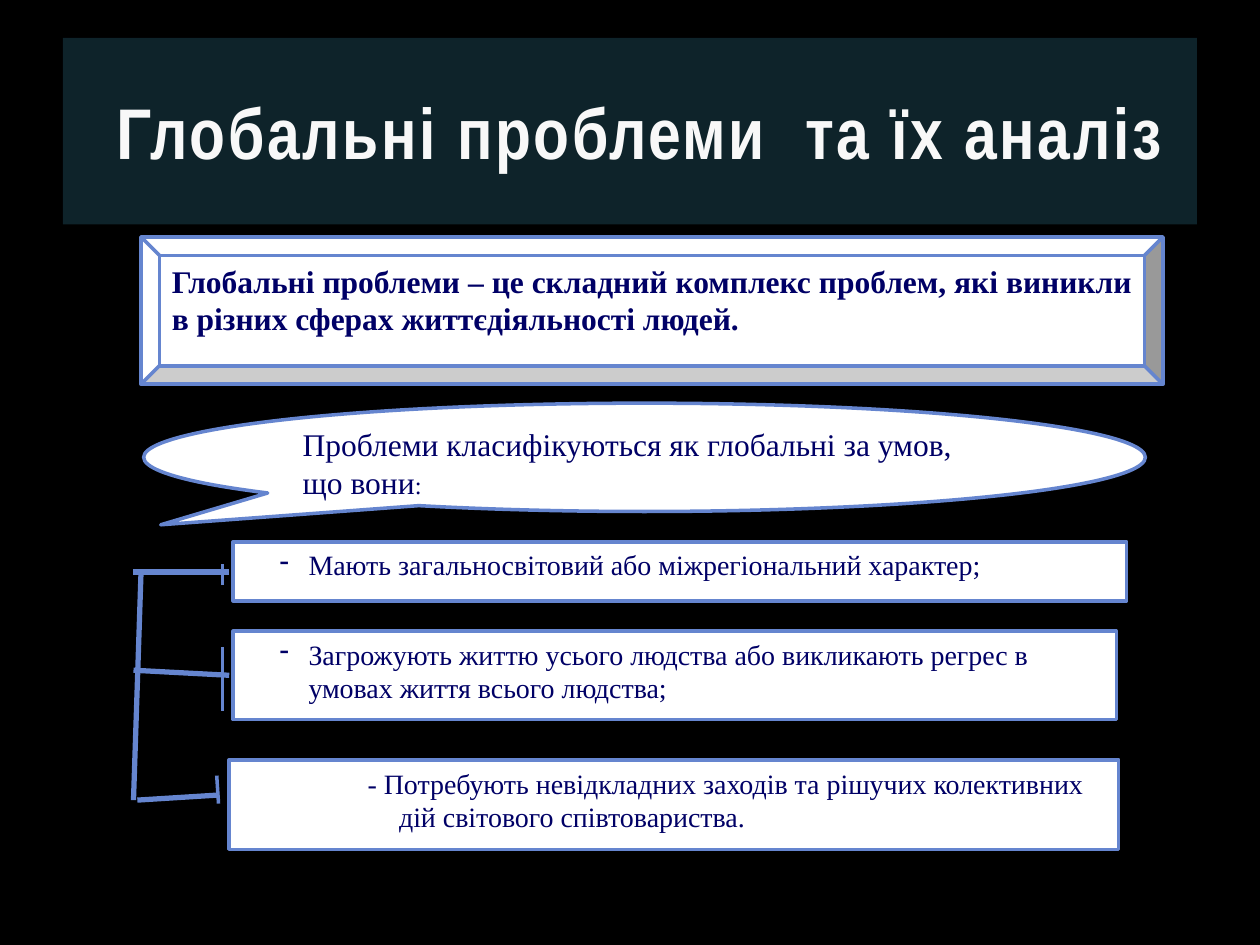
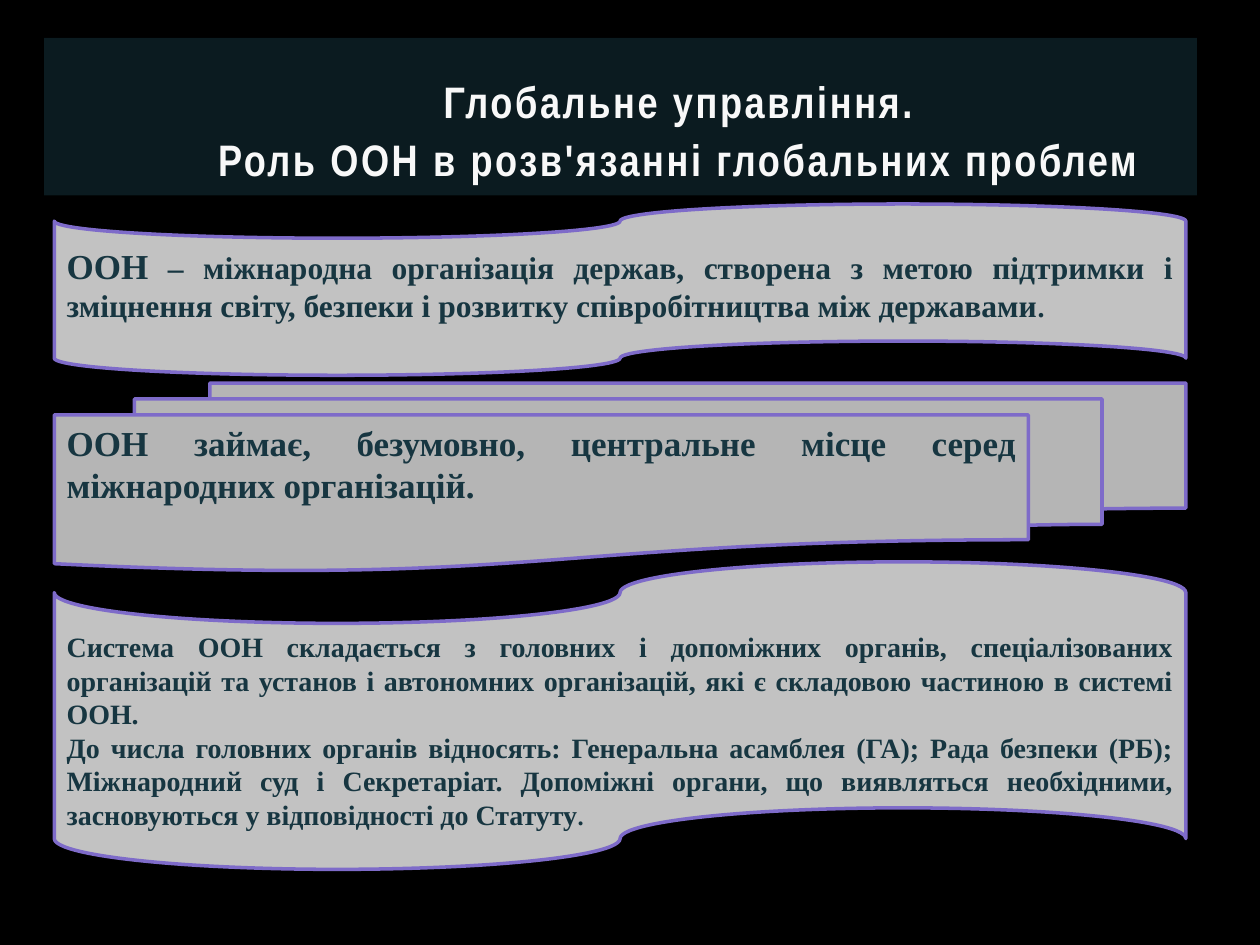
"""Build two slides on global problems and the role of the UN."""
from dataclasses import dataclass

from lxml import etree
from pptx import Presentation, dml, oxml, shapes as sp, slide as sl, util as u
from pptx.dml import color as dc
from pptx.enum import shapes as es, text as et
from pptx.oxml import ns
from pptx.shapes import autoshape as au
from pptx.text import text as tt

Pt = u.Pt
KIND = es.MSO_SHAPE
ALIGN = et.PP_ALIGN
HEX = {
    "black": "000000", "white": "FFFFFF", "pale": "F8F8F8", "navy": "000066",
    "teal": "173641", "blue": "6585CF", "violet": "7E6BC9",
}
SERIF, NARROW = "Times New Roman", "Arial Narrow"


@dataclass
class Look:
    ink: str
    line: str
    bold: bool = False
    align: et.PP_ALIGN = ALIGN.LEFT


@dataclass
class Box:
    kind: es.MSO_SHAPE
    at: tuple[float, float, float, float]
    look: Look
    runs: list[tuple[str, float]]
    adj: tuple[float, ...] = ()
    alpha: int = 100
    margin: float = 0
    indent: float = 0
    dash: bool = False


@dataclass
class Title:
    at: tuple[float, float, float, float]
    lines: list[str]
    size: float
    alpha: int
    left: float = 7.2
    top: float = 3.6
    margin: float = 0


@dataclass
class Line:
    start: tuple[float, float]
    end: tuple[float, float]


PLAIN = Look("navy", "blue")
LEAD = Look("navy", "blue", True, ALIGN.JUSTIFY)
NOTE = Look("teal", "violet", True, ALIGN.JUSTIFY)

HEAD_1 = Title((36, 21.6, 648, 106.6), ["Глобальні проблеми  та їх аналіз"],
               41, 65, left=18.5)
HEAD_2 = Title((25.2, 21.6, 658.8, 90),
               ["Глобальне управління.", "Роль ООН в розв'язанні глобальних проблем"],
               25.2, 50, top=19, margin=66)

ISSUES = [
    Box(KIND.BEVEL, (80.6, 135.4, 584, 84.2), LEAD,
        [("Глобальні проблеми – це складний комплекс проблем, які виникли "
          "в різних сферах життєдіяльності людей.", 18)], (0.125,)),
    Box(KIND.OVAL_CALLOUT, (82.1, 230.4, 572.4, 61.9), PLAIN,
        [("Проблеми класифікуються як глобальні за умов, що вони", 18), (":", 14)],
        (-0.483, 0.623)),
    Box(KIND.LINE_CALLOUT_1, (133.2, 309.6, 510.5, 33.8), PLAIN,
        [("Мають загальносвітовий або міжрегіональний характер;", 16)],
        (0.735, -0.012, 0.379, -0.012), margin=36, indent=-16.5, dash=True),
    Box(KIND.LINE_CALLOUT_1, (133.2, 360.7, 504.7, 50.4), PLAIN,
        [("Загрожують життю усього людства або викликають регрес в "
          "умовах життя всього людства;", 16)],
        (0.179, -0.012, 0.91, -0.012), margin=36, indent=-16.5, dash=True),
    Box(KIND.LINE_CALLOUT_1, (131, 434.2, 508.3, 51.1), PLAIN,
        [("- Потребують невідкладних заходів та рішучих колективних "
          "дій світового співтовариства.", 16)],
        (0.176, -0.014, 0.489, -0.012), margin=90, indent=-18),
]
TREE = [
    Line((80.6, 326.9), (76.3, 457.2)),
    Line((131, 326.9), (76.3, 326.9)),
    Line((131, 385.9), (76.3, 383)),
    Line((125.3, 454.3), (78.5, 457.2)),
]
UNION = [
    Box(KIND.FLOWCHART_PUNCHED_TAPE, (31, 116.6, 646.6, 97.9), NOTE,
        [("ООН", 20),
         (" – міжнародна організація держав, створена з метою підтримки і "
          "зміцнення світу, безпеки і розвитку співробітництва між державами", 18),
         (".", 16)], alpha=76),
    Box(KIND.FLOWCHART_MULTIDOCUMENT, (31, 218.9, 646.6, 107.3), NOTE,
        [("ООН займає, безумовно, центральне місце серед "
          "міжнародних організацій.", 20)], alpha=71),
    Box(KIND.FLOWCHART_PUNCHED_TAPE, (31, 321.1, 646.6, 175.7), NOTE,
        [("Система ООН складається з головних і допоміжних органів, спеціалізованих "
          "організацій та установ і автономних організацій, які є складовою частиною "
          "в системі ООН.\vДо числа головних органів відносять: Генеральна асамблея "
          "(ГА); Рада безпеки (РБ); Міжнародний суд і Секретаріат. Допоміжні органи, "
          "що виявляться необхідними, засновуються у відповідності до Статуту", 16),
         (".", 14)], alpha=76),
]


def tint(name: str) -> dc.RGBColor:
    """Return a named colour."""
    return dc.RGBColor.from_string(HEX[name])


def style(run: tt._Run, face: str, size: float, ink: str, bold: bool) -> None:
    """Format one run."""
    font = run.font
    font.name, font.size, font.bold = face, Pt(size), bold
    font.color.rgb = tint(ink)


def inset(para: tt._Paragraph, margin: float, indent: float) -> etree._Element:
    """Set the paragraph indents and return its properties."""
    prop = para._p.get_or_add_pPr()
    prop.set("marL", str(Pt(margin)))
    prop.set("indent", str(Pt(indent)))
    return prop


def panel(page: sl.Slide, kind: es.MSO_SHAPE, at: tuple[float, ...],
          fill: str, alpha: int) -> au.Shape:
    """Add a filled shape that wraps its text."""
    shape = page.shapes.add_shape(kind, *map(Pt, at))
    shape.shadow.inherit = False
    shape.fill.solid()
    shape.fill.fore_color.rgb = tint(fill)
    if alpha < 100:
        rgb = shape.fill._xPr.find(ns.qn("a:solidFill"))[0]
        etree.SubElement(rgb, ns.qn("a:alpha"), val=str(alpha * 1000))
    shape.text_frame.word_wrap = True
    return shape


def draw_title(page: sl.Slide, head: Title) -> None:
    """Draw the title band."""
    shape = panel(page, KIND.RECTANGLE, head.at, "teal", head.alpha)
    shape.line.fill.background()
    frame = shape.text_frame
    frame.vertical_anchor = et.MSO_ANCHOR.MIDDLE
    frame.margin_left, frame.margin_top = Pt(head.left), Pt(head.top)
    frame.text = "\n".join(head.lines)
    for i, para in enumerate(frame.paragraphs):
        para.alignment = ALIGN.CENTER
        inset(para, head.margin, 0)
        if i:
            para.space_before = Pt(3)
        for run in para.runs:
            style(run, NARROW, head.size, "pale", True)
            run._r.get_or_add_rPr().set("spc", "150")


def draw_box(page: sl.Slide, box: Box) -> None:
    """Draw an outlined shape with its text."""
    look = box.look
    shape = panel(page, box.kind, box.at, "white", box.alpha)
    shape.line.color.rgb = tint(look.line)
    shape.line.width = Pt(2)
    for i, value in enumerate(box.adj):
        shape.adjustments[i] = value
    frame = shape.text_frame
    frame.vertical_anchor = et.MSO_ANCHOR.TOP
    para = frame.paragraphs[0]
    para.alignment, para.space_after = look.align, Pt(10)
    prop = inset(para, box.margin, box.indent)
    if box.dash:
        etree.SubElement(prop, ns.qn("a:buChar"), char="-")
    (first, size), *rest = box.runs
    para.text = first
    for run in para.runs:
        style(run, SERIF, size, look.ink, look.bold)
    for words, size in rest:
        run = para.add_run()
        run.text = words
        style(run, SERIF, size, look.ink, look.bold)


def draw_line(page: sl.Slide, line: Line) -> None:
    """Draw one branch of the tree."""
    ends = map(Pt, line.start + line.end)
    link = page.shapes.add_connector(es.MSO_CONNECTOR.STRAIGHT, *ends)
    link.line.color.rgb = tint("blue")
    link.line.width = Pt(3)
    etree.SubElement(link._element.spPr, ns.qn("a:effectLst"))


def main() -> None:
    """Build and save the slides."""
    deck = Presentation()
    deck.slide_width, deck.slide_height = Pt(720), Pt(540)
    for head, boxes, lines in ((HEAD_1, ISSUES, TREE), (HEAD_2, UNION, [])):
        page = deck.slides.add_slide(deck.slide_layouts[6])
        back = page.background.fill
        back.solid()
        back.fore_color.rgb = tint("black")
        draw_title(page, head)
        for box in boxes:
            draw_box(page, box)
        for line in lines:
            draw_line(page, line)
    deck.save("out.pptx")


if __name__ == "__main__":
    main()
